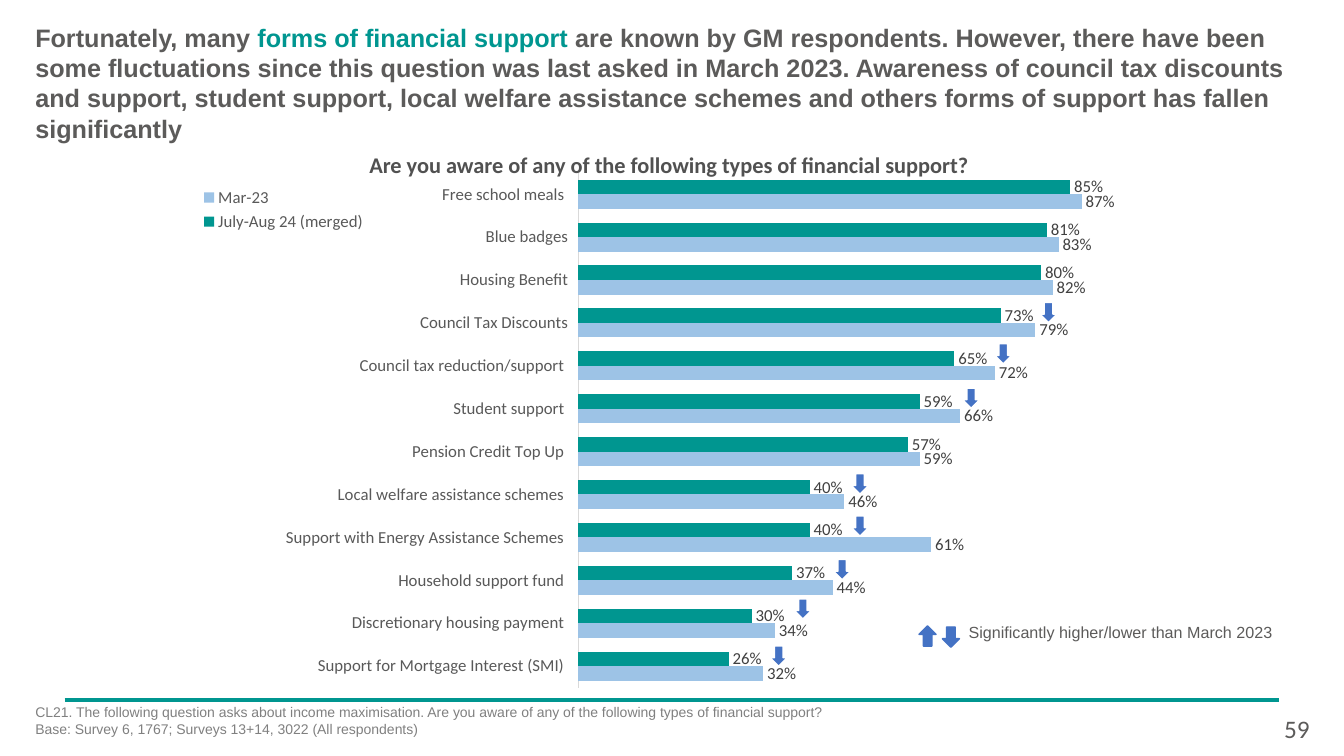
from lxml import etree
from pptx import Presentation
from pptx.chart.data import CategoryChartData
from pptx.dml.color import RGBColor
from pptx.enum.chart import XL_CHART_TYPE as ChartType
from pptx.enum.chart import XL_LABEL_POSITION as LabelPosition
from pptx.enum.chart import XL_LEGEND_POSITION as LegendPosition
from pptx.enum.chart import XL_TICK_LABEL_POSITION as TickLabels
from pptx.enum.chart import XL_TICK_MARK as TickMark
from pptx.enum.shapes import MSO_CONNECTOR as Connector
from pptx.enum.shapes import MSO_SHAPE as Shape
from pptx.enum.text import PP_ALIGN as Align
from pptx.oxml.ns import qn
from pptx.util import Cm, Pt

TEAL, LIGHT_BLUE, ARROW_BLUE = "009690", "9DC3E6", "4472C4"
TEXT_GREY, WHITE = "5C5B5A", "FFFFFF"

TITLE = [
    ("Fortunately, many ", TEXT_GREY),
    ("forms of financial support ", TEAL),
    ("are known by GM respondents. However, there have been some fluctuations since "
     "this question was last asked in March 2023. Awareness of council tax discounts "
     "and support, student support, local welfare assistance schemes and others forms "
     "of support has fallen significantly", TEXT_GREY),
]
# Support type, July-Aug 24, Mar-23
AWARENESS = [
    ("Free school meals ", 0.85, 0.87),
    ("Blue badges", 0.81, 0.83),
    ("Housing Benefit", 0.80, 0.82),
    ("Council Tax Discounts", 0.73, 0.79),
    ("Council tax reduction/support ", 0.65, 0.72),
    ("Student support ", 0.59, 0.66),
    ("Pension Credit Top Up ", 0.57, 0.59),
    ("Local welfare assistance schemes ", 0.40, 0.46),
    ("Support with Energy Assistance Schemes ", 0.40, 0.61),
    ("Household support fund ", 0.37, 0.44),
    ("Discretionary housing payment ", 0.30, 0.34),
    ("Support for Mortgage Interest (SMI) ", 0.26, 0.32),
]
FALL_ARROWS = [
    (26.21, 7.62), (25.07, 8.66), (24.26, 9.78), (21.46, 11.94),
    (21.46, 13), (21.01, 14.1), (20.02, 15.09), (19.41, 16.28),
]
FOOTNOTE = [
    "CL21. The following question asks about income maximisation. "
    "Are you aware of any of the following types of financial support?",
    "Base: Survey 6, 1767; Surveys 13+14, 3022 (All respondents)",
]


def rgb(value):
    return RGBColor.from_string(value)


def style_font(font, size, color, name="Calibri", bold=False):
    font.size, font.name, font.bold = Pt(size), name, bold
    font.color.rgb = rgb(color)


def place_in_chart(parent, index, **settings):
    """Give a chart part a manual layout, in fractions of the chart."""
    for old in parent.findall(qn("c:layout")):
        parent.remove(old)
    layout = etree.Element(qn("c:layout"))
    manual = etree.SubElement(layout, qn("c:manualLayout"))
    for tag, value in settings.items():
        etree.SubElement(manual, qn(f"c:{tag}")).set("val", str(value))
    parent.insert(index, layout)


class SurveySlide:
    def __init__(self, page):
        self.shapes = page.shapes

    def rule(self, left, top, right):
        line = self.shapes.add_connector(
            Connector.STRAIGHT, Cm(left), Cm(top), Cm(right), Cm(top))
        line.line.color.rgb = rgb(TEAL)
        line.line.width = Pt(3)
        etree.SubElement(line._element.spPr, qn("a:effectLst"))

    def text(self, area, paragraphs, size, font="Arial", bold=False,
             align=Align.LEFT, inset=True, wrap=True):
        """Add paragraphs, each a list of (words, colour) spans."""
        frame = self.shapes.add_textbox(*map(Cm, area)).text_frame
        frame.word_wrap = wrap
        if not inset:
            frame.margin_left = frame.margin_right = 0
            frame.margin_top = frame.margin_bottom = 0
        for number, spans in enumerate(paragraphs):
            para = frame.add_paragraph() if number else frame.paragraphs[0]
            para.alignment = align
            for words, color in spans:
                span = para.add_run()
                span.text = words
                style_font(span.font, size, color, font, bold)

    def arrow(self, left, top, outline=WHITE, rotation=0):
        arrow = self.shapes.add_shape(
            Shape.DOWN_ARROW, Cm(left), Cm(top), Cm(0.43), Cm(0.51))
        arrow.shadow.inherit = False
        arrow.rotation = rotation
        arrow.fill.solid()
        arrow.fill.fore_color.rgb = rgb(ARROW_BLUE)
        arrow.line.color.rgb = rgb(outline)
        arrow.line.width = Pt(1)

    def awareness_chart(self, area):
        names, latest, previous = zip(*AWARENESS)
        data = CategoryChartData(number_format="0%")
        data.categories = names
        data.add_series("July-Aug 24 (merged)", latest)
        data.add_series("Mar-23", previous)
        chart = self.shapes.add_chart(
            ChartType.BAR_CLUSTERED, *map(Cm, area), data).chart
        chart.has_title = False
        style_font(chart.font, 10, "000000")
        self.style_axes(chart)
        self.style_bars(chart.plots[0])

        chart.has_legend = True
        chart.legend.position = LegendPosition.RIGHT
        chart.legend.include_in_layout = False
        style_font(chart.legend.font, 12, "595959")
        place_in_chart(chart.legend._element, 1, xMode="edge", yMode="edge",
                       x=0.01, y=0.02, w=0.2, h=0.1)
        plot_area = chart._chartSpace.find(".//" + qn("c:plotArea"))
        place_in_chart(plot_area, 0, layoutTarget="inner", xMode="edge",
                       yMode="edge", x=0.406, y=0, w=0.582, h=0.978)

    def style_axes(self, chart):
        names = chart.category_axis
        names.reverse_order = True
        names.major_tick_mark = names.minor_tick_mark = TickMark.NONE
        names.tick_label_position = TickLabels.LOW
        names.format.line.color.rgb = rgb("D9D9D9")
        names.format.line.width = Pt(0.75)
        style_font(names.tick_labels.font, 12, "595959")
        values = chart.value_axis
        values.minimum_scale, values.maximum_scale = 0, 1
        values.has_major_gridlines = False
        values.visible = False

    def style_bars(self, plot):
        plot.gap_width = 95
        plot.vary_by_categories = False
        for series, color in zip(plot.series, (TEAL, LIGHT_BLUE)):
            series.format.fill.solid()
            series.format.fill.fore_color.rgb = rgb(color)
            labels = series.data_labels
            labels.show_value = True
            labels.position = LabelPosition.OUTSIDE_END
            labels.number_format = "0%"
            labels.number_format_is_linked = False
            style_font(labels.font, 12, "404040")


def main():
    deck = Presentation()
    deck.slide_width, deck.slide_height = Cm(33.87), Cm(19.05)
    slide = SurveySlide(deck.slides.add_slide(deck.slide_layouts[6]))

    slide.rule(1.63, 17.63, 32.23)
    question = "Are you aware of any of the following types of financial support? "
    slide.text((9.19, 3.81, 15.47, 0.69), [[(question, "515151")]], 16,
               font="Calibri", bold=True, align=Align.CENTER, inset=False)
    slide.text((0.89, 0.56, 31.8, 3.07), [TITLE], 18, bold=True, inset=False)
    slide.awareness_chart((4.39, 4.34, 25.07, 13.28))

    slide.arrow(23.16, 15.77, outline=ARROW_BLUE, rotation=180)
    slide.arrow(23.75, 15.8, outline=ARROW_BLUE)
    slide.text((24.16, 15.57, 8.23, 0.74),
               [[("Significantly higher/lower than March 2023", TEXT_GREY)]],
               11.5, wrap=False)
    for left, top in FALL_ARROWS:
        slide.arrow(left, top)

    slide.text((0.64, 17.6, 31.47, 1.32),
               [[(line, "808080")] for line in FOOTNOTE], 10)
    slide.text((32.11, 17.86, 1.35, 1.02), [[("59", TEXT_GREY)]], 18,
               font="Calibri")
    deck.save("out.pptx")


if __name__ == "__main__":
    main()
